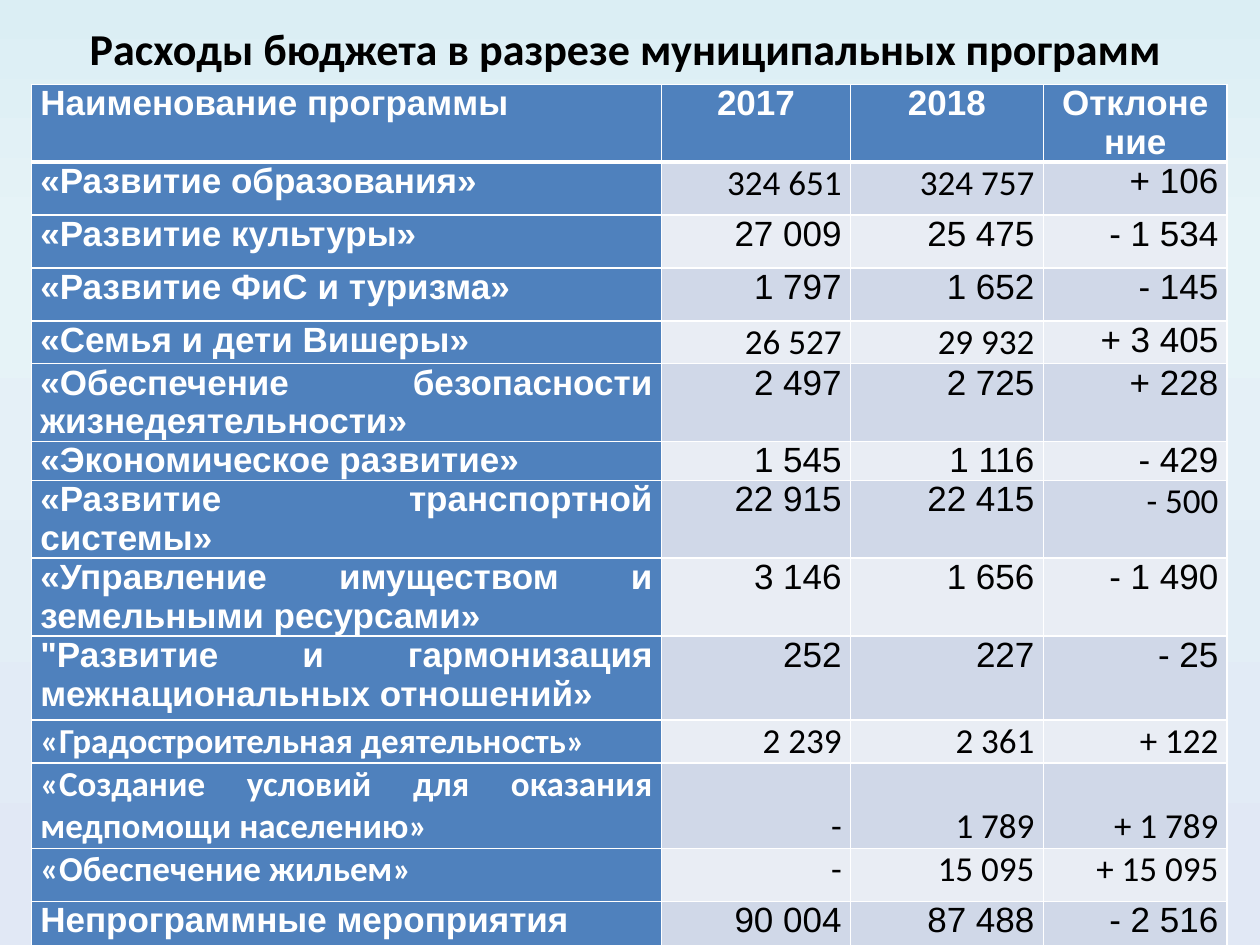
from copy import deepcopy
from lxml import etree
from pptx import Presentation, util as u
from pptx.dml.color import RGBColor
from pptx.enum import text
from pptx.oxml.ns import qn

HUES = {"sky": "DBEEF4", "mist": "E6F3F7", "haze": "E1E8F5", "blue": "4F81BD",
        "dark": "D0D8E8", "light": "E9EDF4", "white": "FFFFFF", "black": "000000"}
SIDE = {"J": text.PP_ALIGN.JUSTIFY, "C": text.PP_ALIGN.CENTER, "R": text.PP_ALIGN.RIGHT}
LEAD = {"Arial": 1.11, "Calibri": 1.22}  # line height per point of size


def write(frame, words, side, face, size, hue, bold):
    frame.text = words
    for para in frame.paragraphs:
        para.alignment = SIDE[side]
        para.line_spacing = u.Pt(LEAD[face] * size)
        for run in para.runs:
            look = {"name": face, "size": u.Pt(size), "bold": bold}
            for key, val in look.items():
                setattr(run.font, key, val)
            run.font.color.rgb = RGBColor.from_string(HUES[hue])


def edge(cell, tag, width):
    line = etree.SubElement(cell._tc.get_or_add_tcPr(), qn("a:" + tag), w=str(u.Pt(width)))
    fill = etree.SubElement(line, qn("a:solidFill"))
    etree.SubElement(fill, qn("a:srgbClr"), val=HUES["white"])


deck = Presentation()
deck.slide_width, deck.slide_height = u.Inches(10), u.Inches(7.5)
slide = deck.slides.add_slide(deck.slide_layouts[6])

# Background: three stops from top to bottom
back = slide.background.fill
back.gradient()
back.gradient_angle = 270
stops = slide._element.find(".//" + qn("a:gsLst"))
stops.insert(1, deepcopy(stops[0]))
for stop, hue, pos in zip(back.gradient_stops, ("sky", "mist", "haze"), (0, 0.25, 1)):
    stop.color.rgb = RGBColor.from_string(HUES[hue])
    stop.position = pos

# Title
title = slide.shapes.add_textbox(u.Inches(0.28), u.Inches(0.17), u.Inches(9.37), u.Inches(0.42))
title.text_frame.word_wrap = True
title.text_frame.vertical_anchor = text.MSO_ANCHOR.MIDDLE
write(title.text_frame, "Расходы бюджета в разрезе муниципальных программ",
      "C", "Calibri", 25.2, "black", True)

# Rows: height, font of each cell (A = Arial, C = Calibri), texts
FACE = {"A": "Arial", "C": "Calibri"}
ROWS = [
    (0.59, "AAAA", "Наименование программы", "2017", "2018", "Отклоне\nние"),
    (0.42, "ACCA", "«Развитие образования»", "324 651", "324 757", "+ 106"),
    (0.42, "AAAA", "«Развитие культуры»", "27 009", "25 475", "- 1 534"),
    (0.42, "AAAA", "«Развитие ФиС и туризма»", "1 797", "1 652", "- 145"),
    (0.31, "ACCA", "«Семья и дети Вишеры»", "26 527", "29 932", "+ 3 405"),
    (0.59, "AAAA", "«Обеспечение безопасности жизнедеятельности»", "2 497", "2 725", "+ 228"),
    (0.31, "AAAA", "«Экономическое развитие»", "1 545", "1 116", "- 429"),
    (0.33, "AAAC", "«Развитие транспортной системы»", "22 915", "22 415", "- 500"),
    (0.59, "AAAA", "«Управление имуществом и земельными ресурсами»", "3 146", "1 656", "- 1 490"),
    (0.67, "AAAA", "\"Развитие и гармонизация межнациональных отношений»", "252", "227", "- 25"),
    (0.33, "CCCC", "«Градостроительная деятельность»", "2 239", "2 361", "+ 122"),
    (0.42, "CCCC", "«Создание условий для оказания медпомощи населению»", "-", "1 789", "+ 1 789"),
    (0.42, "CCCC", "«Обеспечение жильем»", "-", "15 095", "+ 15 095"),
    (0.42, "AAAA", "Непрограммные мероприятия", "90 004", "87 488", "- 2 516"),
]
LOW = 11  # the row whose numbers sit at the bottom
COLS = (5, 1.5, 1.53, 1.46)

# Table
grid = slide.shapes.add_table(len(ROWS), len(COLS), u.Inches(0.25), u.Inches(0.67),
                              u.Inches(sum(COLS)), u.Inches(6.24)).table
for col, wide in zip(grid.columns, COLS):
    col.width = u.Inches(wide)

inset = {"margin_left": u.Inches(0.07), "margin_right": u.Inches(0.07),
         "margin_top": 0, "margin_bottom": 0}
for r, (tall, faces, *words) in enumerate(ROWS):
    grid.rows[r].height = u.Inches(tall)
    for c, word in enumerate(words):
        cell = grid.cell(r, c)
        for key, val in inset.items():
            setattr(cell, key, val)
        if r == LOW and c:
            cell.vertical_anchor = text.MSO_ANCHOR.BOTTOM
        head = r == 0 or c == 0
        side = "J" if c == 0 else "C" if r == 0 else "R"
        write(cell.text_frame, word, side, FACE[faces[c]], 20,
              "white" if head else "black", head)
        for tag in ("lnL", "lnR", "lnT", "lnB"):
            edge(cell, tag, 3 if (r, tag) in ((0, "lnB"), (1, "lnT")) else 1)
        cell.fill.solid()
        band = "blue" if head else "dark" if r % 2 else "light"
        cell.fill.fore_color.rgb = RGBColor.from_string(HUES[band])

deck.save("out.pptx")
